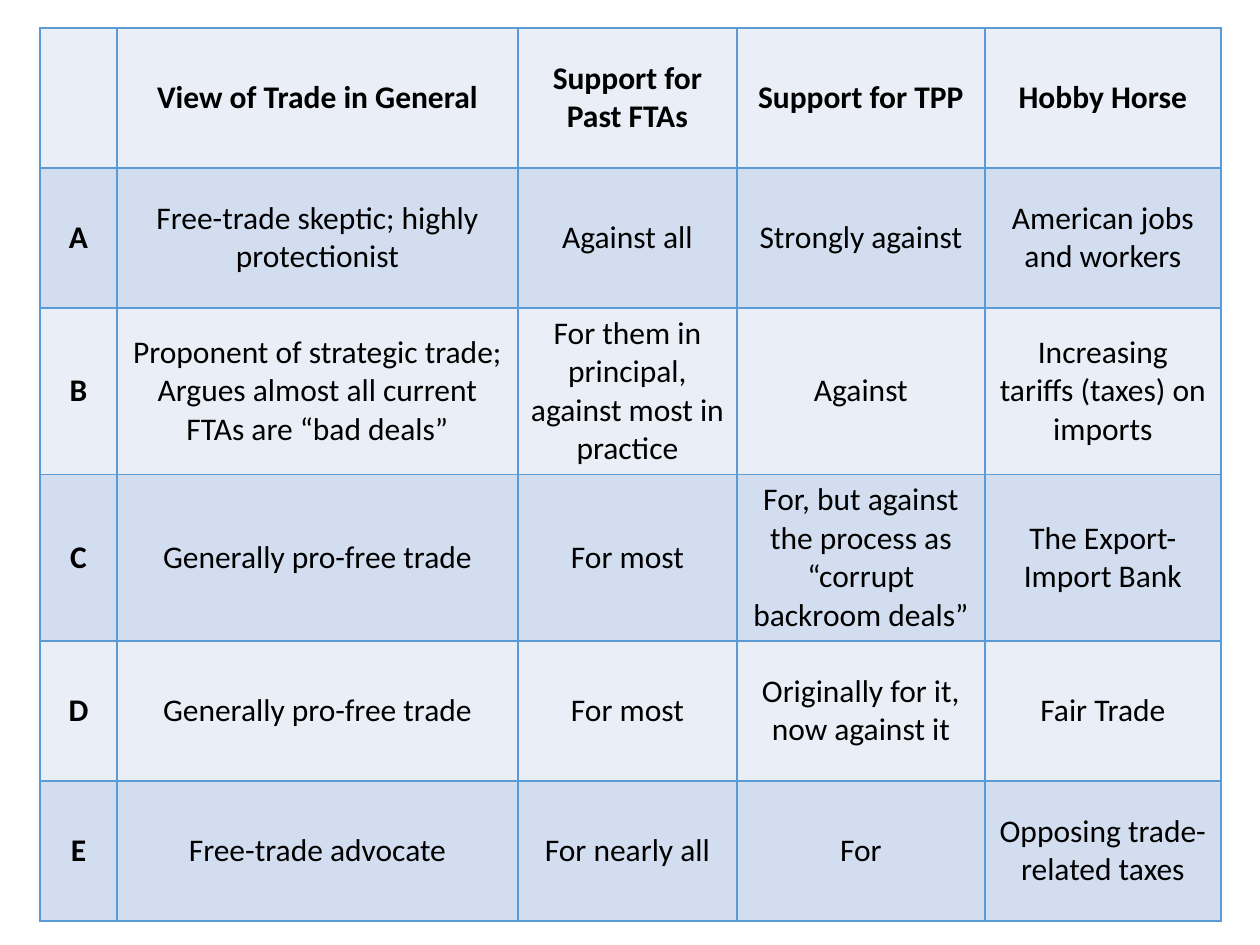
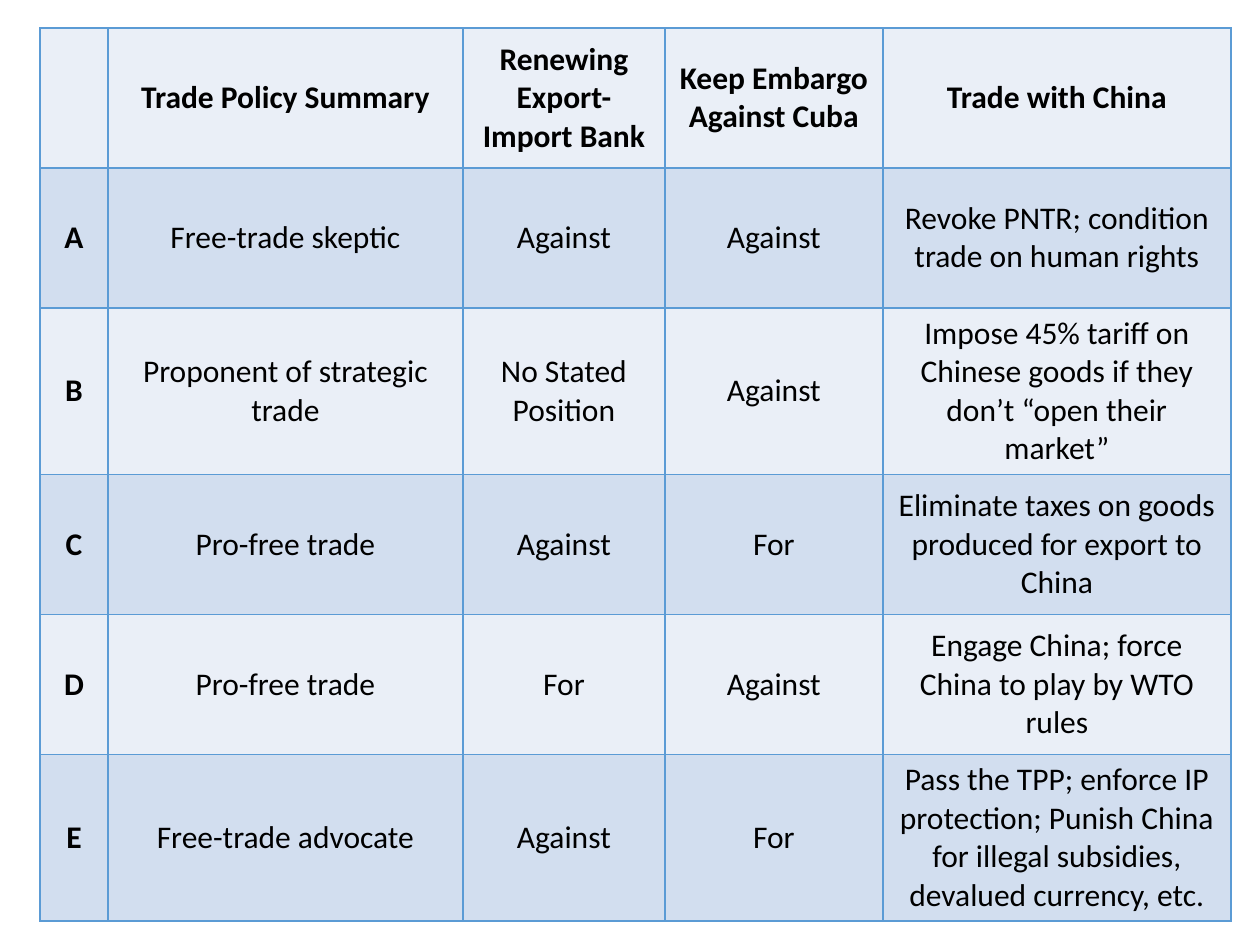
"""Build two slides comparing trade positions A to E."""
import lxml.etree
import pptx
import pptx.dml.color
import pptx.enum.text
import pptx.oxml.ns
import pptx.util

RGBColor = pptx.dml.color.RGBColor
PALE = RGBColor(0xEA, 0xEF, 0xF7)
BLUE = RGBColor(0xD2, 0xDE, 0xEF)
LINE = RGBColor(0x5B, 0x9B, 0xD5)
BLACK = RGBColor(0, 0, 0)
FONT = "Calibri"
SCALE = 914400 / 126
LEFT, TOP, ROW = 40, 28, 140

VIEWS = [
    ["", "View of Trade in General", "Support for Past FTAs",
     "Support for TPP", "Hobby Horse"],
    ["A", "Free-trade skeptic; highly protectionist", "Against all",
     "Strongly against", "American jobs and workers"],
    ["B", "Proponent of strategic trade;\n"
     "Argues almost all current FTAs are “bad deals”",
     "For them in principal, against most in practice", "Against",
     "Increasing tariffs (taxes) on imports"],
    ["C", "Generally pro-free trade", "For most",
     "For, but against the process as “corrupt backroom deals”",
     "The Export-Import Bank"],
    ["D", "Generally pro-free trade", "For most",
     "Originally for it, now against it", "Fair Trade"],
    ["E", "Free-trade advocate", "For nearly all", "For",
     "Opposing trade-related taxes"],
]
POLICY = [
    ["", "Trade Policy Summary", "Renewing Export-Import Bank",
     "Keep Embargo Against Cuba", "Trade with China"],
    ["A", "Free-trade skeptic", "Against", "Against",
     "Revoke PNTR; condition trade on human rights"],
    ["B", "Proponent of strategic trade", "No Stated Position", "Against",
     "Impose 45% tariff on Chinese goods if they don’t “open their market”"],
    ["C", "Pro-free trade", "Against", "For",
     "Eliminate taxes on goods produced for export to China"],
    ["D", "Pro-free trade", "For", "Against",
     "Engage China; force China to play by WTO rules"],
    ["E", "Free-trade advocate", "Against", "For",
     "Pass the TPP; enforce IP protection; Punish China for illegal "
     "subsidies, devalued currency, etc."],
]


def px(num):
    """Turn px into EMU."""
    return pptx.util.Emu(round(num * SCALE))


def add_edges(cell):
    """Draw a thin line on all four sides of a cell."""
    props = cell._tc.get_or_add_tcPr()
    qn = pptx.oxml.ns.qn
    for side in ("lnL", "lnR", "lnT", "lnB"):
        edge = lxml.etree.SubElement(props, qn(f"a:{side}"), w=str(pptx.util.Pt(1)))
        fill = lxml.etree.SubElement(edge, qn("a:solidFill"))
        lxml.etree.SubElement(fill, qn("a:srgbClr"), val=str(LINE))


def add_text(cell, text, bold):
    """Write centred text, one paragraph a line."""
    cell.vertical_anchor = pptx.enum.text.MSO_ANCHOR.MIDDLE
    frame = cell.text_frame
    for num, line in enumerate(text.split("\n")):
        para = frame.add_paragraph() if num else frame.paragraphs[0]
        para.alignment = pptx.enum.text.PP_ALIGN.CENTER
        if line:
            run = para.add_run()
            run.text = line
            run.font.name = FONT
            run.font.size = pptx.util.Pt(18)
            run.font.bold = bold
            run.font.color.rgb = BLACK


def add_grid(slide, rows, widths):
    """Add a banded table with bold first row and column."""
    table = slide.shapes.add_table(
        len(rows), len(widths), px(LEFT), px(TOP),
        px(sum(widths)), px(ROW * len(rows))).table
    table.first_row = table.horz_banding = False
    for col, width in zip(table.columns, widths):
        col.width = px(width)
    for r, row in enumerate(rows):
        table.rows[r].height = px(ROW)
        for c, text in enumerate(row):
            cell = table.cell(r, c)
            add_edges(cell)
            cell.fill.solid()
            cell.fill.fore_color.rgb = BLUE if r % 2 else PALE
            add_text(cell, text, r == 0 or c == 0)


def main():
    """Build and save the deck."""
    deck = pptx.Presentation()
    deck.slide_width, deck.slide_height = px(1260), px(945)
    blank = deck.slide_layouts[6]
    add_grid(deck.slides.add_slide(blank), VIEWS, [77, 401, 219, 248, 236])
    add_grid(deck.slides.add_slide(blank), POLICY, [68, 355, 202, 218, 348])
    deck.save("out.pptx")


if __name__ == "__main__":
    main()
